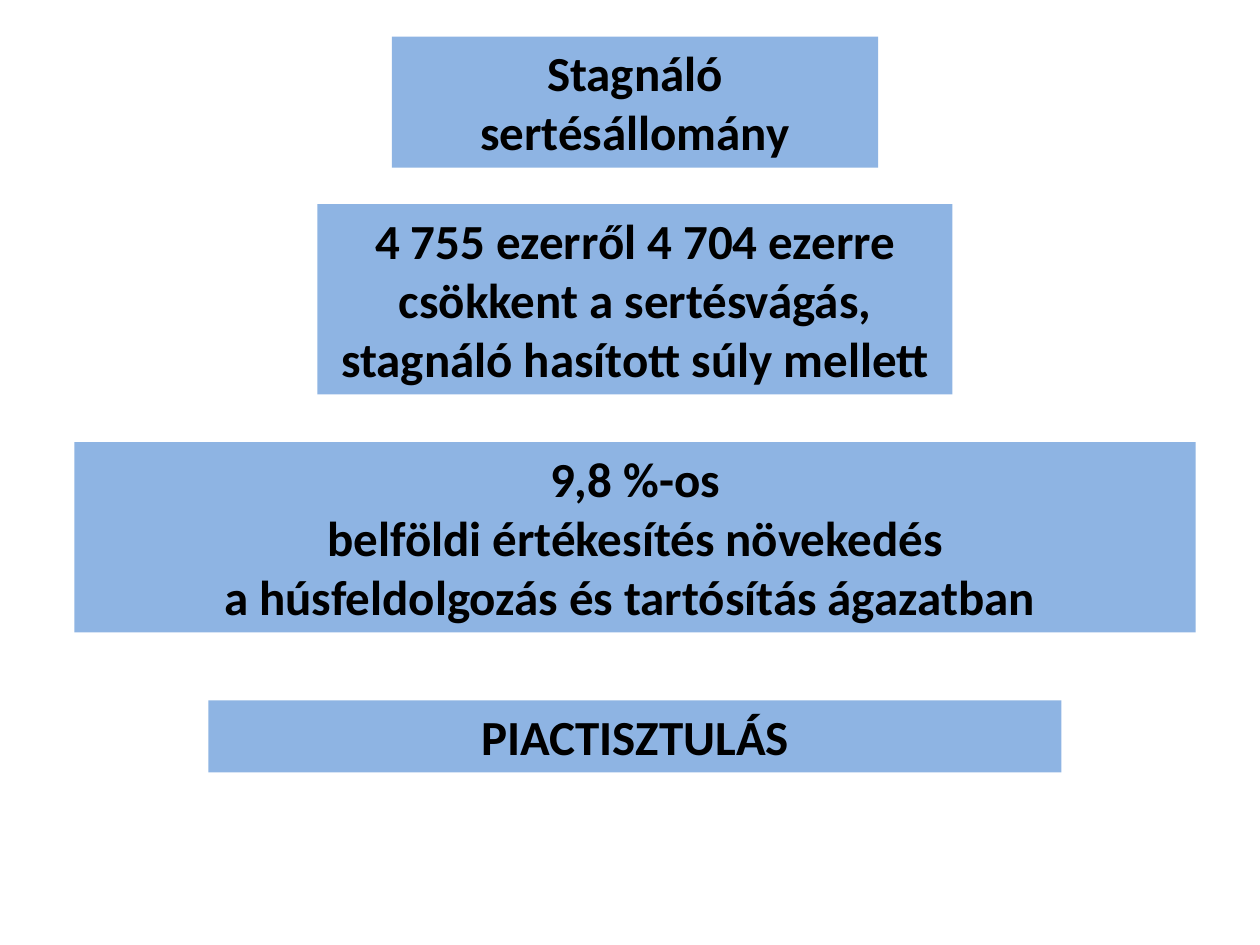
from pptx import Presentation
from pptx.dml.color import RGBColor
from pptx.enum.text import MSO_AUTO_SIZE, PP_ALIGN
from pptx.util import Inches, Pt

CENTER = PP_ALIGN.CENTER
GROW = MSO_AUTO_SIZE.SHAPE_TO_FIT_TEXT

LIGHT_BLUE = RGBColor(0x8E, 0xB4, 0xE3)
BLACK = RGBColor(0, 0, 0)

BLANK_LAYOUT = 6
AXIS = 5.04  # shared vertical centre line of all boxes, in inches

# top, width, height in inches, then the text
STATEMENTS = [
    (0.29, 3.86, 1.04, "Stagnáló sertésállomány"),
    (1.62, 5.04, 1.51,
     "4 755 ezerről 4 704 ezerre csökkent a sertésvágás, "
     "stagnáló hasított súly mellett"),
    (3.51, 8.9, 1.51,
     "9,8 %-os\n belföldi értékesítés növekedés \n"
     "a húsfeldolgozás és tartósítás ágazatban "),
    (5.56, 6.77, 0.57, "PIACTISZTULÁS"),
]


def add_statement(slide, top, width, height, text):
    """Add a filled text box centred on the axis."""
    box = slide.shapes.add_textbox(
        Inches(AXIS - width / 2), Inches(top), Inches(width), Inches(height))
    box.fill.solid()
    box.fill.fore_color.rgb = LIGHT_BLUE

    frame = box.text_frame
    frame.word_wrap = True
    frame.auto_size = GROW

    # Newlines become line breaks within the single paragraph
    paragraph = frame.paragraphs[0]
    paragraph.text = text
    paragraph.alignment = CENTER
    font = paragraph.font
    font.name = "Calibri"
    font.size = Pt(28)
    font.bold = True
    font.color.rgb = BLACK


def main():
    presentation = Presentation()
    presentation.slide_width = Inches(10)
    presentation.slide_height = Inches(7.5)
    slide = presentation.slides.add_slide(
        presentation.slide_layouts[BLANK_LAYOUT])

    # Chain of statements from top to bottom
    for top, width, height, text in STATEMENTS:
        add_statement(slide, top, width, height, text)

    presentation.save("out.pptx")


if __name__ == "__main__":
    main()
